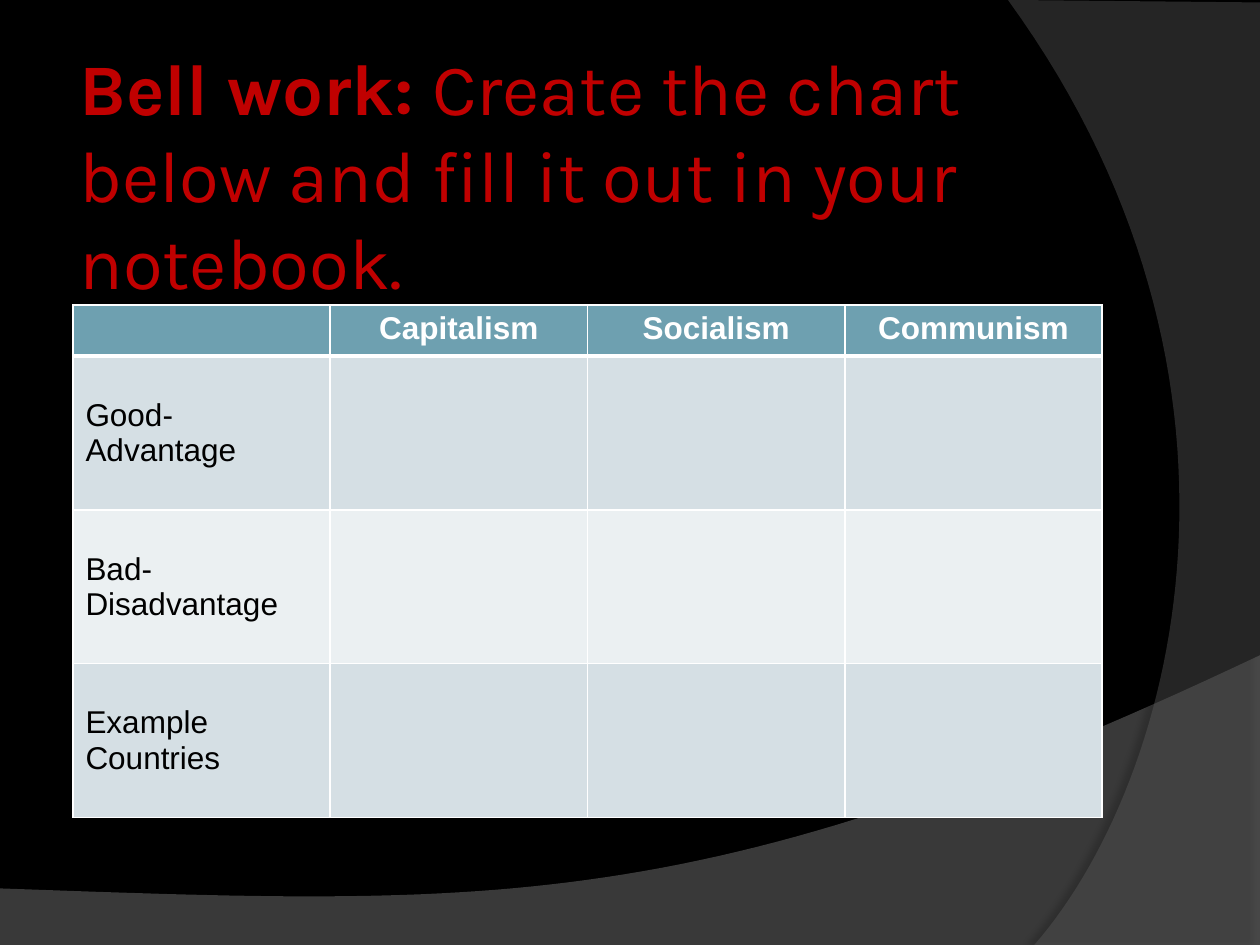
"""Build the bell work slide comparing three economic systems."""
from dataclasses import dataclass

from lxml.etree import SubElement
from pptx import Presentation
from pptx.dml.color import RGBColor as Rgb
from pptx.enum.text import MSO_ANCHOR as Anchor
from pptx.enum.text import MSO_AUTO_SIZE as AutoSize
from pptx.enum.text import PP_ALIGN as Align
from pptx.oxml.ns import qn
from pptx.util import Cm, Pt

TITLE = [("Bell work: ", True), ("Create the chart below and fill it out in your notebook.", False)]
SYSTEMS = ["Capitalism", "Socialism", "Communism"]
TOPICS = ["Good-\nAdvantage", "Bad-\nDisadvantage", "Example Countries"]

WAVES = [
    {
        "edge": [(0, 19.08), (25.4, 19.08)],
        "curve": [(25.4, 13.21), (14.2, 18.52), (9.93, 18.26), (0, 17.91)],
        "color": "7F7F7F", "opacity": 45,
        "shadow": {"opacity": 35, "distance": 3.5, "angle": 270},
    },
    {
        "edge": [(25.4, 0.05), (25.4, 19.05)],
        "curve": [(20.85, 19.05), (23.75, 15.72), (25.86, 7.62), (20.32, 0)],
        "color": "5E5E5E", "opacity": 40,
        "shadow": {"opacity": 45, "distance": 4, "angle": 180},
    },
]


@dataclass(frozen=True)
class Theme:
    """Colours, fonts and type sizes."""
    background: str = "000000"
    title: str = "C00000"
    header: str = "6EA0B0"
    bands: tuple = ("D5DFE4", "EBF0F2")
    border: str = "FFFFFF"
    header_text: str = "FFFFFF"
    body_text: str = "000000"
    title_font: str = "Karla"
    table_font: str = "Arial"
    title_size: float = 41.4
    table_size: float = 18
    thin: float = 1
    thick: float = 3


THEME = Theme()
LEFT, WIDTH = 1.47, 20.75
TITLE_TOP, TITLE_HEIGHT = 1.9, 3.18
TABLE_TOP, HEADER_HEIGHT, ROW_HEIGHT = 6.15, 1.03, 3.1
CURVE_STEPS = 60


def style_run(span, font, size, color, bold):
    span.font.name, span.font.size, span.font.bold = font, Pt(size), bold
    span.font.color.rgb = Rgb.from_string(color)


def curve_points(controls):
    for step in range(CURVE_STEPS + 1):
        t = step / CURVE_STEPS
        weights = ((1 - t) ** 3, 3 * t * (1 - t) ** 2, 3 * t * t * (1 - t), t ** 3)
        yield tuple(sum(w * p[axis] for w, p in zip(weights, controls)) for axis in (0, 1))


def set_opacity(color, percent):
    SubElement(color, qn("a:alpha"), val=str(percent * 1000))


def add_wave(page, wave, depth):
    points = [(Cm(x), Cm(y)) for x, y in [*wave["edge"], *curve_points(wave["curve"])]]
    builder = page.shapes.build_freeform(*points[0])
    builder.add_line_segments(points[1:], close=True)
    shape = builder.convert_to_shape()
    shape.fill.solid()
    shape.fill.fore_color.rgb = Rgb.from_string(wave["color"])
    shape.line.fill.background()
    shape.shadow.inherit = False
    properties = shape.element.spPr
    set_opacity(properties.find(qn("a:solidFill"))[0], wave["opacity"])
    shadow = wave["shadow"]
    outer = SubElement(
        properties.find(qn("a:effectLst")), qn("a:outerShdw"), blurRad=str(Pt(4)),
        dist=str(Pt(shadow["distance"])), dir=str(shadow["angle"] * 60000), rotWithShape="0")
    set_opacity(SubElement(outer, qn("a:srgbClr"), val="000000"), shadow["opacity"])
    page.shapes.element.insert(2 + depth, shape.element)


def add_title(page):
    box = page.shapes.title
    box.left, box.top, box.width, box.height = map(Cm, (LEFT, TITLE_TOP, WIDTH, TITLE_HEIGHT))
    frame = box.text_frame
    frame.word_wrap, frame.auto_size = True, AutoSize.NONE
    frame.vertical_anchor = Anchor.MIDDLE
    frame.margin_left = frame.margin_right = frame.margin_top = frame.margin_bottom = Cm(0.13)
    para = frame.paragraphs[0]
    para.alignment = Align.LEFT
    for words, bold in TITLE:
        span = para.add_run()
        span.text = words
        style_run(span, THEME.title_font, THEME.title_size, THEME.title, bold)


def set_borders(cell, top, bottom):
    properties = cell._tc.get_or_add_tcPr()
    for side, width in (("L", THEME.thin), ("R", THEME.thin), ("T", top), ("B", bottom)):
        line = SubElement(properties, qn(f"a:ln{side}"), w=str(Pt(width)))
        SubElement(SubElement(line, qn("a:solidFill")), qn("a:srgbClr"), val=THEME.border)


def format_cell(cell, words, row):
    header = row == 0
    set_borders(cell, THEME.thick if row == 1 else THEME.thin, THEME.thick if header else THEME.thin)
    cell.fill.solid()
    fill = THEME.header if header else THEME.bands[(row - 1) % 2]
    cell.fill.fore_color.rgb = Rgb.from_string(fill)
    cell.vertical_anchor = Anchor.TOP if header else Anchor.MIDDLE
    cell.text_frame.text = words
    for para in cell.text_frame.paragraphs:
        para.alignment = Align.CENTER if header else Align.LEFT
        for span in para.runs:
            color = THEME.header_text if header else THEME.body_text
            style_run(span, THEME.table_font, THEME.table_size, color, header)


def add_comparison(page):
    rows = [["", *SYSTEMS], *([topic] + [""] * len(SYSTEMS) for topic in TOPICS)]
    heights = [HEADER_HEIGHT] + [ROW_HEIGHT] * len(TOPICS)
    place = map(Cm, (LEFT, TABLE_TOP, WIDTH, sum(heights)))
    table = page.shapes.add_table(len(rows), len(rows[0]), *place).table
    for column in table.columns:
        column.width = Cm(WIDTH / len(rows[0]))
    for row, (words, height) in enumerate(zip(rows, heights)):
        table.rows[row].height = Cm(height)
        for column, text in enumerate(words):
            format_cell(table.cell(row, column), text, row)


def main():
    deck = Presentation()
    deck.slide_width, deck.slide_height = Cm(25.4), Cm(19.05)
    page = deck.slides.add_slide(deck.slide_layouts[5])
    page.background.fill.solid()
    page.background.fill.fore_color.rgb = Rgb.from_string(THEME.background)
    for depth, wave in enumerate(WAVES):
        add_wave(page, wave, depth)
    add_title(page)
    add_comparison(page)
    deck.save("out.pptx")


if __name__ == "__main__":
    main()
